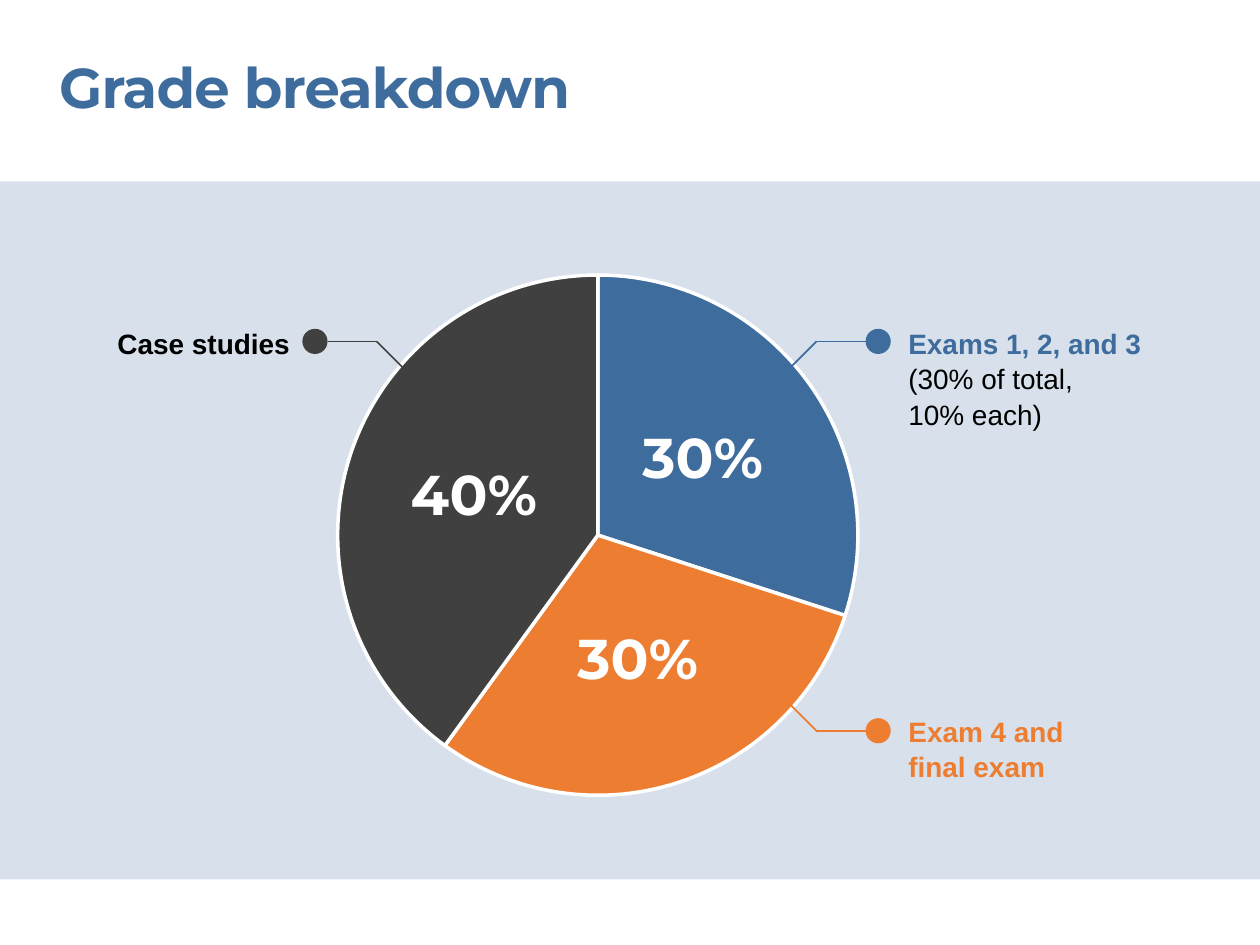
from lxml import etree
from pptx import Presentation
from pptx.chart.data import CategoryChartData
from pptx.dml.color import RGBColor
from pptx.enum.chart import XL_CHART_TYPE, XL_LABEL_POSITION
from pptx.enum.shapes import MSO_CONNECTOR, MSO_SHAPE
from pptx.enum.text import MSO_AUTO_SIZE, PP_ALIGN
from pptx.oxml import parse_xml
from pptx.oxml.ns import nsdecls, qn
from pptx.util import Inches, Pt

BLUE = RGBColor(0x3D, 0x6C, 0x9D)
ORANGE = RGBColor(0xED, 0x7D, 0x31)
GRAY = RGBColor(0x40, 0x40, 0x40)
BLACK = RGBColor(0, 0, 0)
WHITE = RGBColor(0xFF, 0xFF, 0xFF)

LABEL = {"name": "Arial", "size": Pt(16), "bold": True}
TITLE = {"name": "Montserrat", "size": Pt(32), "bold": True}
DOT = 0.2


def set_font(font, color, formats):
    for name, value in formats.items():
        setattr(font, name, value)
    font.color.rgb = color


def add_filled_shape(page, kind, place, color):
    shape = page.shapes.add_shape(kind, *map(Inches, place))
    shape.shadow.inherit = False
    shape.fill.solid()
    shape.fill.fore_color.rgb = color
    shape.line.fill.background()
    return shape


def add_band(page):
    band = add_filled_shape(page, MSO_SHAPE.RECTANGLE, (0, 1.44, 10, 5.54), BLUE)
    color = band.fill._xPr.find(qn("a:solidFill"))[0]
    etree.SubElement(color, qn("a:alpha"), val="20000")


def add_text(page, place, lines, align=PP_ALIGN.LEFT, spacing=1.05):
    """Each line is (text, color, font formats)."""
    box = page.shapes.add_textbox(*map(Inches, place))
    frame = box.text_frame
    frame.word_wrap = True
    frame.auto_size = MSO_AUTO_SIZE.SHAPE_TO_FIT_TEXT
    for side in ("left", "top", "right", "bottom"):
        setattr(frame, f"margin_{side}", 0)
    for index, (text, color, formats) in enumerate(lines):
        para = frame.add_paragraph() if index else frame.paragraphs[0]
        para.alignment = align
        para.line_spacing = spacing
        span = para.add_run()
        span.text = text
        set_font(span.font, color, formats)
    return box


def add_pie(page):
    data = CategoryChartData(number_format="0%")
    data.categories = ["1", "2", "3"]
    data.add_series("Series 1", (0.3, 0.3, 0.4))
    place = map(Inches, (1.41, 2.05, 6.67, 4.44))
    chart = page.shapes.add_chart(XL_CHART_TYPE.PIE, *place, data).chart
    chart.has_legend = False
    chart.has_title = False
    set_font(chart.font, BLACK, {"name": "Arial", "size": Pt(10)})

    # Slices
    plot = chart.plots[0]
    plot.vary_by_categories = True
    for index, color in enumerate((BLUE, ORANGE, GRAY)):
        slice_format = plot.series[0].points[index].format
        slice_format.fill.solid()
        slice_format.fill.fore_color.rgb = color
        slice_format.line.color.rgb = WHITE
        slice_format.line.width = Pt(2)

    # Percentages
    labels = plot.series[0].data_labels
    options = {"show_value": True, "show_percentage": False,
               "show_category_name": False, "show_legend_key": False,
               "position": XL_LABEL_POSITION.CENTER,
               "number_format": "0%", "number_format_is_linked": False}
    for name, value in options.items():
        setattr(labels, name, value)
    set_font(labels.font, WHITE, TITLE)

    # Plot area as fractions of the chart
    parts = '<c:layoutTarget val="inner"/><c:xMode val="edge"/><c:yMode val="edge"/>'
    for name, value in {"x": 0.19, "y": 0.03, "w": 0.62, "h": 0.93}.items():
        parts += f'<c:{name} val="{value}"/>'
    layout = parse_xml(f'<c:layout {nsdecls("c")}><c:manualLayout>{parts}'
                       '</c:manualLayout></c:layout>')
    area = chart._chartSpace.chart.plotArea
    for old in area.findall(qn("c:layout")):
        area.remove(old)
    area.insert(0, layout)


def add_line(page, start, end, color):
    line = page.shapes.add_connector(
        MSO_CONNECTOR.STRAIGHT, *map(Inches, (*start, *end)))
    line.line.color.rgb = color
    line.line.width = Pt(1)
    etree.SubElement(line._element.spPr, qn("a:effectLst"))


def add_callout(page, edge, across, down, color):
    """Lead from the pie edge to a dot; across and down are 1 or -1."""
    x, y = edge
    level = y + 0.28 * down
    elbow = (x + 0.28 * across, level)
    add_line(page, edge, elbow, color)
    add_line(page, elbow, (x + 0.67 * across, level), color)
    center = x + 0.77 * across
    place = (center - DOT / 2, level - DOT / 2, DOT, DOT)
    add_filled_shape(page, MSO_SHAPE.OVAL, place, color)


def main():
    deck = Presentation()
    deck.slide_width, deck.slide_height = Inches(10), Inches(7.5)
    page = deck.slides.add_slide(deck.slide_layouts[6])

    # Background band and title
    add_band(page)
    title = add_text(page, (0.47, 0.42, 8.55, 0.54),
                     [("Grade breakdown", BLUE, TITLE)], spacing=1.0)
    span = title.text_frame.paragraphs[0].runs[0]
    span.font._element.set("spc", "-50")

    add_pie(page)

    # Slice names
    plain = {**LABEL, "bold": False}
    add_text(page, (0.3, 2.58, 2, 0.27),
             [("Case studies", BLACK, LABEL)], PP_ALIGN.RIGHT)
    add_text(page, (7.21, 2.58, 2.27, 0.81),
             [("Exams 1, 2, and 3", BLUE, LABEL),
              ("(30% of total,", BLACK, plain),
              ("10% each)", BLACK, plain)])
    add_text(page, (7.21, 5.66, 1.98, 0.54),
             [("Exam 4 and", ORANGE, LABEL), ("final exam", ORANGE, LABEL)])

    # Callouts
    add_callout(page, (3.27, 2.99), -1, -1, GRAY)
    add_callout(page, (6.2, 2.99), 1, -1, BLUE)
    add_callout(page, (6.2, 5.52), 1, 1, ORANGE)

    deck.save("out.pptx")


if __name__ == "__main__":
    main()
